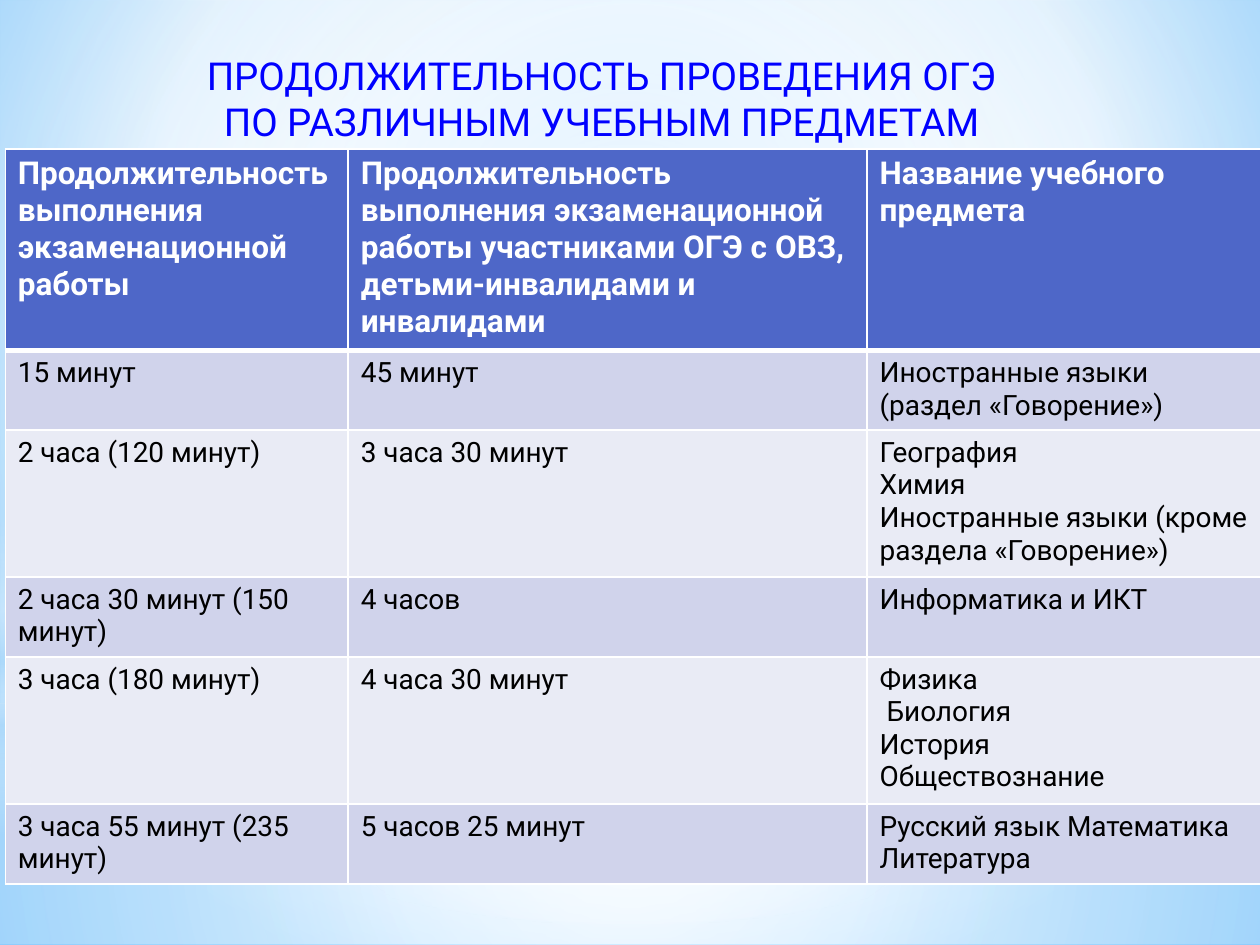
from pptx import Presentation
from pptx.dml.color import RGBColor as Rgb
from pptx.enum.shapes import MSO_SHAPE as Geo
from pptx.enum.text import PP_ALIGN as Align
from pptx.oxml import parse_xml
from pptx.oxml.ns import nsdecls, qn
from pptx.util import Pt

THEME = {
    "font": "Roboto", "title": "0000FF", "head": "4E67C8", "odd": "D0D3EB",
    "even": "E9EBF5", "white": "FFFFFF", "ink": "000000", "sky": "B4DCFA",
    "pale": "9ED5FF", "deep": "5BB9FF", "big": 22, "mid": 18, "small": 16,
}
SIZE = (720, 540)
TITLE = "ПРОДОЛЖИТЕЛЬНОСТЬ ПРОВЕДЕНИЯ ОГЭ ПО РАЗЛИЧНЫМ УЧЕБНЫМ ПРЕДМЕТАМ"
SPOT = (90, 26, 504, 70.5)
GRID = (3, 85, 717, 233)
COLS = (196, 296.5, 225)
ROWS = [
    ("Продолжительность выполнения экзаменационной работы",
     "Продолжительность выполнения экзаменационной работы участниками ОГЭ "
     "с ОВЗ, детьми-инвалидами и инвалидами",
     "Название учебного предмета"),
    ("15 минут", "45 минут", "Иностранные языки (раздел «Говорение»)"),
    ("2 часа (120 минут)", "3 часа 30 минут",
     "География\nХимия\nИностранные языки (кроме раздела «Говорение»)"),
    ("2 часа 30 минут (150 минут)", "4 часов", "Информатика и ИКТ"),
    ("3 часа (180 минут)", "4 часа 30 минут",
     "Физика\n Биология\nИстория\nОбществознание"),
    ("3 часа 55 минут (235 минут)", "5 часов 25 минут",
     "Русский язык Математика\nЛитература"),
]
BACK = [(0, "pale", 100), (60, "white", 100), (100, "deep", 100)]
MID = (50, 50, 50, 50)
GLOW = [
    (Geo.RECTANGLE, (0, 402, 720, 138), MID,
     [(0, "white", 91), (37, "white", 76), (100, "sky", 79)]),
    (Geo.RECTANGLE, (0, 0, 720, 402), MID,
     [(0, "white", 89), (48, "white", 62), (100, "sky", 79)]),
    (Geo.RECTANGLE, (0, 297, 720, 180), None,
     [(0, "white", 0), (29, "white", 30), (45, "sky", 40),
      (55, "white", 26), (65, "sky", 60), (100, "white", 0)]),
    (Geo.OVAL, (0, 126, 720, 402), MID,
     [(0, "white", 100), (56, "white", 0)]),
]


def blend(host, stops, focus):
    """Replace the solid fill inside host by a gradient."""
    marks = "".join(
        f'<a:gs pos="{at * 1000}"><a:srgbClr val="{THEME[tint]}">'
        f'<a:alpha val="{alpha * 1000}"/></a:srgbClr></a:gs>'
        for at, tint, alpha in stops)
    if focus:
        sides = " ".join(f'{k}="{v * 1000}"' for k, v in zip("ltrb", focus))
        way = f'<a:path path="circle"><a:fillToRect {sides}/></a:path>'
    else:
        way = '<a:lin ang="5400000" scaled="0"/>'
    old = host.find(".//" + qn("a:solidFill"))
    old.getparent().replace(old, parse_xml(
        f'<a:gradFill {nsdecls("a")} rotWithShape="1">'
        f'<a:gsLst>{marks}</a:gsLst>{way}</a:gradFill>'))


def style(para, tint, **form):
    """Set the font of a paragraph's runs."""
    for run in para.runs:
        for key, val in {"name": THEME["font"], **form}.items():
            setattr(run.font, key, val)
        run.font.color.rgb = Rgb.from_string(THEME[tint])


def edge(cell, low):
    """Draw the white borders of a cell."""
    props = cell._tc.get_or_add_tcPr()
    for spot, (side, wide) in enumerate(zip("LRTB", (1, 1, 1, low))):
        props.insert(spot, parse_xml(
            f'<a:ln{side} {nsdecls("a")} w="{Pt(wide)}"><a:solidFill>'
            f'<a:srgbClr val="{THEME["white"]}"/></a:solidFill></a:ln{side}>'))


def scene(slide):
    """Paint the background and its glows."""
    slide.background.fill.solid()
    blend(slide.element, BACK, (20, 10, 20, 60))
    for kind, spot, focus, stops in GLOW:
        glow = slide.shapes.add_shape(kind, *map(Pt, spot))
        glow.shadow.inherit = False
        glow.line.fill.background()
        glow.fill.solid()
        blend(glow._element, stops, focus)


def title(slide):
    """Add the heading."""
    frame = slide.shapes.add_textbox(*map(Pt, SPOT)).text_frame
    frame.word_wrap = True
    frame.text = TITLE
    para = frame.paragraphs[0]
    form = {"alignment": Align.CENTER, "space_before": Pt(2),
            "space_after": Pt(3)}
    for key, val in form.items():
        setattr(para, key, val)
    para._p.get_or_add_pPr().set("marL", str(Pt(3.6)))
    style(para, "title", size=Pt(THEME["big"]))


def table(slide):
    """Add the table of exam times."""
    grid = slide.shapes.add_table(
        len(ROWS), len(COLS), *map(Pt, GRID)).table
    for col, wide in zip(grid.columns, COLS):
        col.width = Pt(wide)
    for r, row in enumerate(ROWS):
        head = r == 0
        fill = "head" if head else "odd" if r % 2 else "even"
        size = THEME["mid" if head else "small"]
        for c, text in enumerate(row):
            cell = grid.cell(r, c)
            cell.text = text
            cell.fill.solid()
            cell.fill.fore_color.rgb = Rgb.from_string(THEME[fill])
            edge(cell, 3 if head else 1)
            for para in cell.text_frame.paragraphs:
                style(para, "white" if head else "ink",
                      size=Pt(size), bold=head)


def main():
    """Build the slide and save it."""
    deck = Presentation()
    deck.slide_width, deck.slide_height = map(Pt, SIZE)
    slide = deck.slides.add_slide(deck.slide_layouts[6])
    for part in (scene, title, table):
        part(slide)
    deck.save("out.pptx")


if __name__ == "__main__":
    main()
